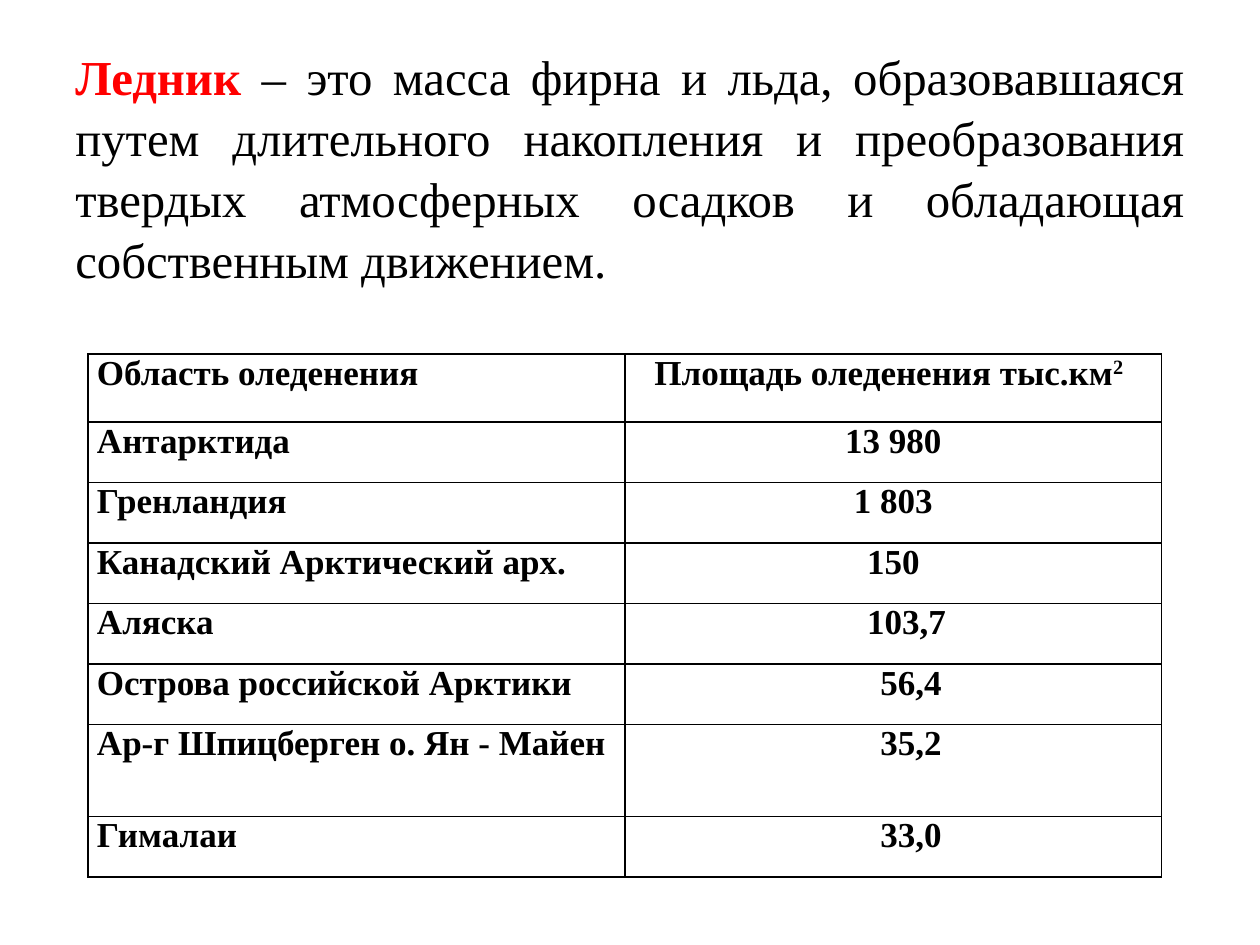
"""Build a slide defining a glacier and listing glaciation areas by region."""
from dataclasses import dataclass

from lxml.etree import SubElement
from pptx import Presentation
from pptx.dml.color import RGBColor
from pptx.enum.text import MSO_ANCHOR as Anchor, PP_ALIGN as Align
from pptx.oxml.ns import qn
from pptx.util import Inches, Pt

COLORS = {"accent": "FF0000", "ink": "000000", "paper": "FFFFFF"}
FONT = "Times New Roman"
CELL_INSET = 0.07
BORDER_SIDES = ("a:lnL", "a:lnR", "a:lnT", "a:lnB")


@dataclass(frozen=True)
class Region:
    name: str
    area: str
    height: float = 0.48
    indent: float = 0
    right_indent: float = 0
    exponent: str = ""


REGIONS = [
    Region("Область оледенения", "Площадь оледенения тыс.км", 0.54, right_indent=0.07, exponent="2"),
    Region("Антарктида", "13 980"),
    Region("Гренландия", "1 803"),
    Region("Канадский Арктический арх.", "150"),
    Region("Аляска", "103,7", indent=0.21),
    Region("Острова российской Арктики", "56,4", indent=0.28),
    Region("Ар-г Шпицберген о. Ян - Майен", "35,2", 0.73, indent=0.28),
    Region("Гималаи", "33,0", indent=0.28),
]


def add_run(paragraph, text: str, size: float, bold: bool = True, color: str = "ink"):
    """Append a formatted run and return it."""
    run = paragraph.add_run()
    run.text = text
    run.font.name = FONT
    run.font.size = Pt(size)
    run.font.bold = bold
    run.font.color.rgb = RGBColor.from_string(COLORS[color])
    return run


def style_cell(cell, left: float = 0, right: float = 0) -> None:
    """Give a cell its insets, borders and fill."""
    cell.margin_left = Inches(CELL_INSET + left)
    cell.margin_right = Inches(CELL_INSET + right)
    cell.margin_top = cell.margin_bottom = 0
    properties = cell._tc.get_or_add_tcPr()
    for side in BORDER_SIDES:
        line = SubElement(properties, qn(side), w=str(Pt(1)))
        SubElement(SubElement(line, qn("a:solidFill")), qn("a:srgbClr"), val=COLORS["ink"])
    cell.fill.solid()
    cell.fill.fore_color.rgb = RGBColor.from_string(COLORS["paper"])


def add_definition(slide) -> None:
    """Add the justified definition of a glacier."""
    frame = slide.shapes.add_textbox(Inches(0.5), Inches(0.3), Inches(9), Inches(2.04)).text_frame
    frame.word_wrap = True
    frame.vertical_anchor = Anchor.MIDDLE
    definition = frame.paragraphs[0]
    definition.alignment = Align.JUSTIFY
    definition.line_spacing = 1.04
    add_run(definition, "Ледник", 27.9, color="accent")
    add_run(
        definition,
        " – это масса фирна и льда, образовавшаяся путем длительного накопления и "
        "преобразования твердых атмосферных осадков и обладающая собственным движением.",
        27.9,
        bold=False,
    )


def add_region_table(slide, regions: list[Region]) -> None:
    """Add the table of regions and their glaciation areas."""
    table = slide.shapes.add_table(
        len(regions), 2, Inches(0.7), Inches(2.81), Inches(8.52),
        Inches(sum(region.height for region in regions)),
    ).table
    table.first_row = table.horz_banding = False
    for row, region in zip(table.rows, regions):
        row.height = Inches(region.height)
        name_cell, area_cell = row.cells
        style_cell(name_cell)
        style_cell(area_cell, region.indent, region.right_indent)
        add_run(name_cell.text_frame.paragraphs[0], region.name, 20)
        area = area_cell.text_frame.paragraphs[0]
        area.alignment = Align.CENTER
        add_run(area, region.area, 20)
        if region.exponent:
            exponent = add_run(area, region.exponent, 20)
            exponent.font._element.set("baseline", "30000")


def main() -> None:
    """Create and save the presentation."""
    presentation = Presentation()
    presentation.slide_width = Inches(10)
    presentation.slide_height = Inches(7.5)
    slide = presentation.slides.add_slide(presentation.slide_layouts[6])
    add_definition(slide)
    add_region_table(slide, REGIONS)
    presentation.save("out.pptx")


if __name__ == "__main__":
    main()
